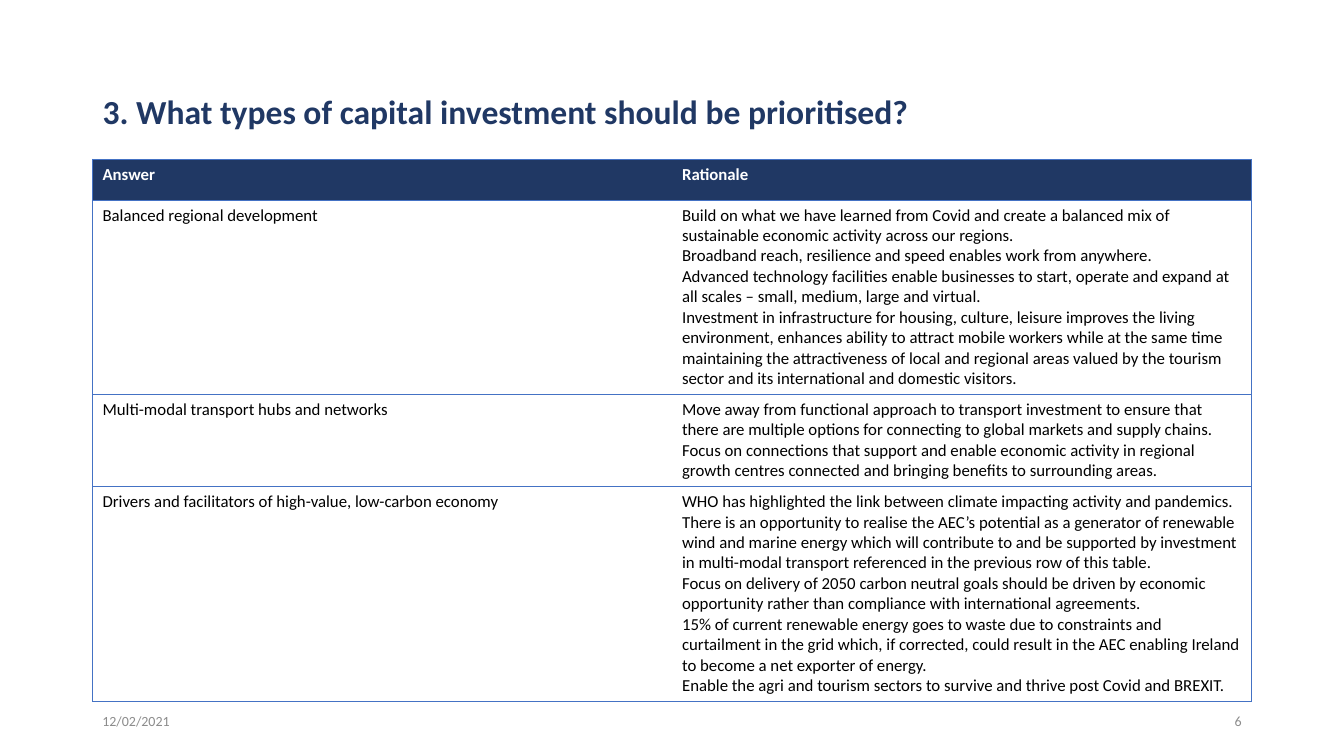
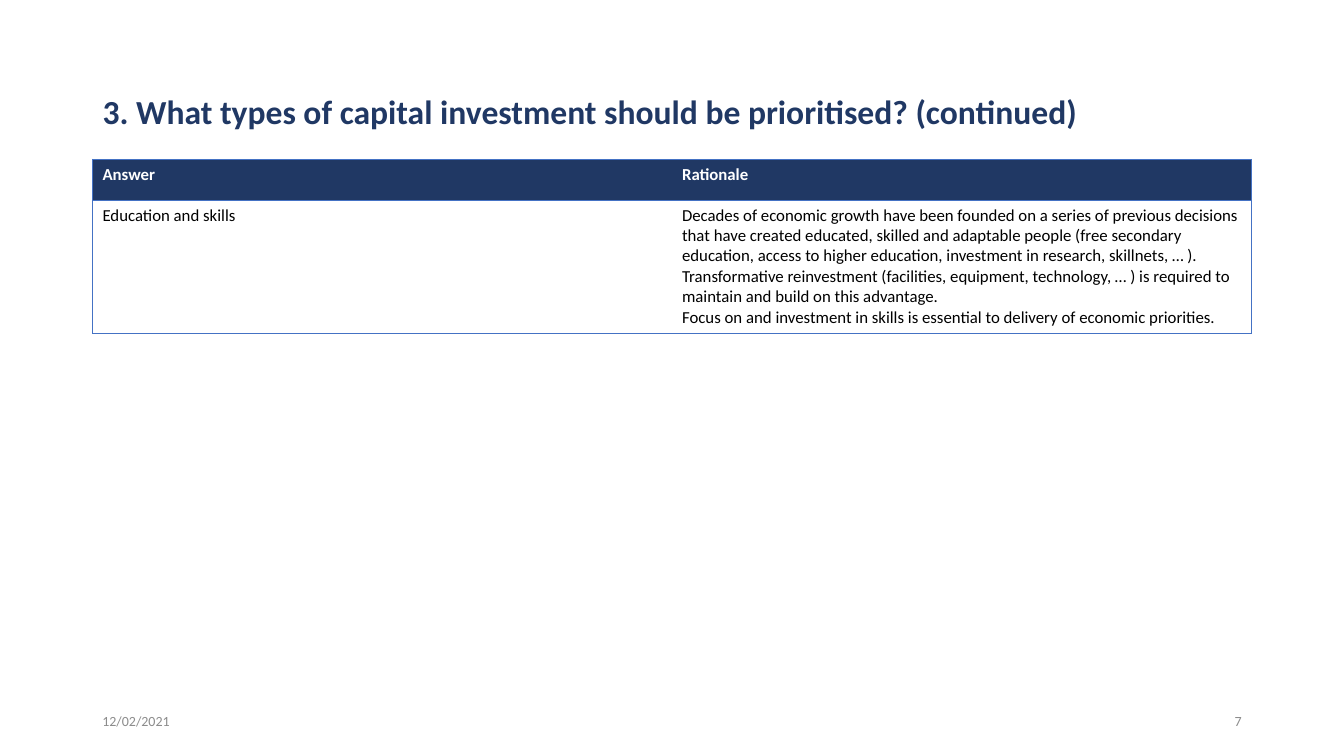
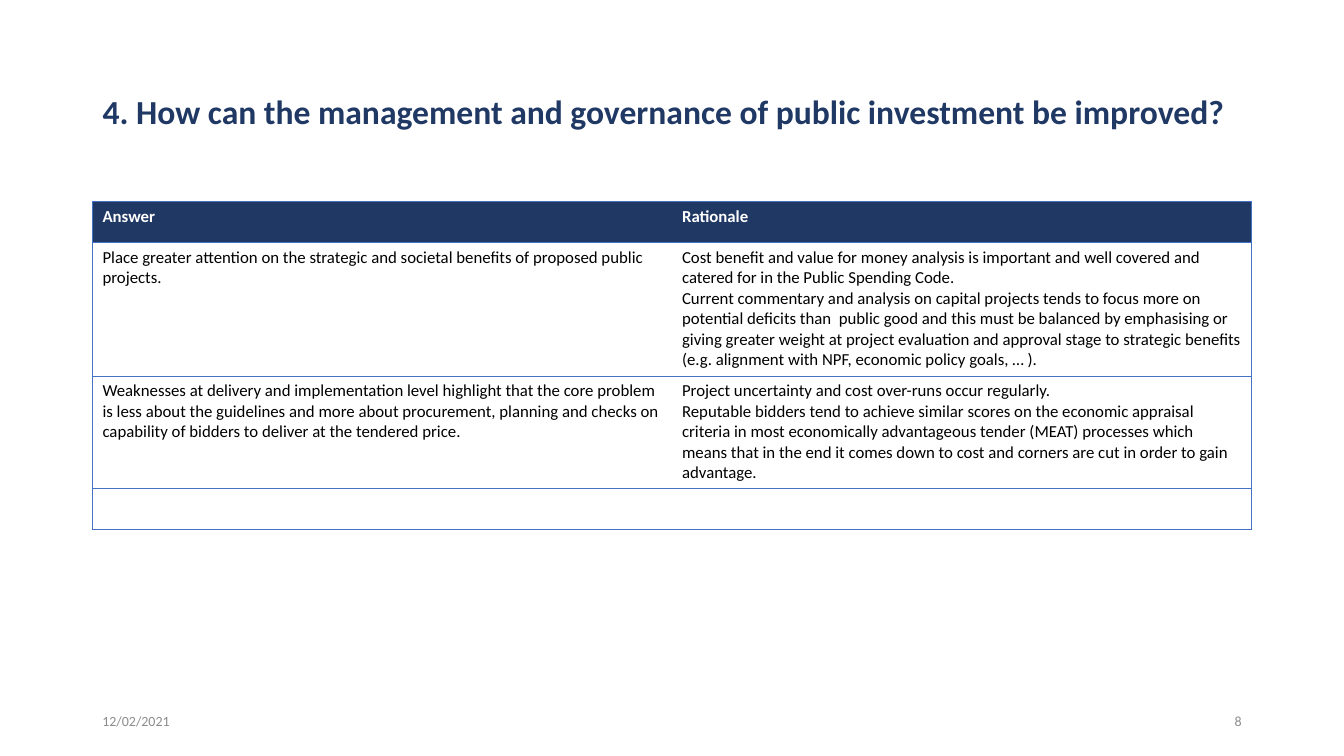
from lxml import etree
from pptx import Presentation
from pptx.dml.color import RGBColor
from pptx.enum.text import MSO_ANCHOR, MSO_AUTO_SIZE, PP_ALIGN
from pptx.oxml.ns import qn
from pptx.util import Cm, Pt

MIDDLE = MSO_ANCHOR.MIDDLE
NO_AUTOFIT = MSO_AUTO_SIZE.NONE
LEFT, RIGHT = PP_ALIGN.LEFT, PP_ALIGN.RIGHT

# Shared look
NAVY = RGBColor(0x20, 0x38, 0x64)
BORDER_BLUE = RGBColor(0x44, 0x72, 0xC4)
FOOTER_GREY = RGBColor(0x8C, 0x8C, 0x8C)
BLACK = RGBColor(0, 0, 0)
WHITE = RGBColor(0xFF, 0xFF, 0xFF)
FONT = "Calibri"
PLAIN_TABLE_STYLE = "{2D5ABB26-0587-4C30-8999-92F81FD0307C}"

MARGIN = Cm(2.33)
CONTENT_WIDTH = Cm(29.21)
FOOTER_WIDTH = Cm(7.62)
SHORT_ROW = 1.03
DATE = "12/02/2021"
FIRST_NUMBER = 6
HEADER = (SHORT_ROW, "Answer", ["Rationale"])

# Each slide: title, table top in cm, rows of (height in cm, answer, rationale paragraphs)
SLIDES = [
    ("3. What types of capital investment should be prioritised?", 4.01, [
        (4.9, "Balanced regional development", [
            "Build on what we have learned from Covid and create a balanced mix of "
            "sustainable economic activity across our regions.",
            "Broadband reach, resilience and speed enables work from anywhere.",
            "Advanced technology facilities enable businesses to start, operate and "
            "expand at all scales – small, medium, large and virtual.",
            "Investment in infrastructure for housing, culture, leisure improves the "
            "living environment, enhances ability to attract mobile workers while at "
            "the same time maintaining the attractiveness of local and regional areas "
            "valued by the tourism sector and its international and domestic visitors.",
        ]),
        (2.32, "Multi-modal transport hubs and networks", [
            "Move away from functional approach to transport investment to ensure that "
            "there are multiple options for connecting to global markets and supply "
            "chains.",
            "Focus on connections that support and enable economic activity in regional "
            "growth centres connected and bringing benefits to surrounding areas.",
        ]),
        (5.42, "Drivers and facilitators of high-value, low-carbon economy", [
            "WHO has highlighted the link between climate impacting activity and "
            "pandemics.",
            "There is an opportunity to realise the AEC’s potential as a generator of "
            "renewable wind and marine energy which will contribute to and be supported "
            "by investment in multi-modal transport referenced in the previous row of "
            "this table.",
            "Focus on delivery of 2050 carbon neutral goals should be driven by economic "
            "opportunity rather than compliance with international agreements.",
            "15% of current renewable energy goes to waste due to constraints and "
            "curtailment in the grid which, if corrected, could result in the AEC "
            "enabling Ireland to become a net exporter of energy.",
            "Enable the agri and tourism sectors to survive and thrive post Covid and "
            "BREXIT.",
        ]),
    ]),
    ("3. What types of capital investment should be prioritised? (continued)", 4.01, [
        (3.36, "Education and skills", [
            "Decades of economic growth have been founded on a series of previous "
            "decisions that have created educated, skilled and adaptable people (free "
            "secondary education, access to higher education, investment in research, "
            "skillnets, … ). Transformative reinvestment (facilities, equipment, "
            "technology, … ) is required to maintain and build on this advantage.",
            "Focus on and investment in skills is essential to delivery of economic "
            "priorities.",
        ]),
    ]),
    ("4. How can the management and governance of public investment be improved?", 5.08, [
        (3.36, "Place greater attention on the strategic and societal benefits of "
               "proposed public projects.", [
            "Cost benefit and value for money analysis is important and well covered and "
            "catered for in the Public Spending Code.",
            "Current commentary and analysis on capital projects tends to focus more on "
            "potential deficits than  public good and this must be balanced by "
            "emphasising or giving greater weight at project evaluation and approval "
            "stage to strategic benefits (e.g. alignment with NPF, economic policy "
            "goals, … ).",
        ]),
        (2.84, "Weaknesses at delivery and implementation level highlight that the core "
               "problem is less about the guidelines and more about procurement, planning "
               "and checks on capability of bidders to deliver at the tendered price.", [
            "Project uncertainty and cost over-runs occur regularly.",
            "Reputable bidders tend to achieve similar scores on the economic appraisal "
            "criteria in most economically advantageous tender (MEAT) processes which "
            "means that in the end it comes down to cost and corners are cut in order to "
            "gain advantage.",
        ]),
        (SHORT_ROW, "", [""]),
    ]),
]


def write_text(frame, lines, size, color, bold=False, align=LEFT):
    frame.text = "\n".join(lines)
    for paragraph in frame.paragraphs:
        paragraph.alignment = align
        paragraph.font.name = FONT
        paragraph.font.size = Pt(size)
        paragraph.font.bold = bold
        paragraph.font.color.rgb = color


def add_borders(cell, sides):
    properties = cell._tc.get_or_add_tcPr()
    for side in sides:
        line = etree.SubElement(properties, qn(f"a:ln{side}"), w=str(Pt(0.5)))
        fill = etree.SubElement(line, qn("a:solidFill"))
        etree.SubElement(fill, qn("a:srgbClr"), val=str(BORDER_BLUE))


presentation = Presentation()
presentation.slide_width = Cm(33.87)
presentation.slide_height = Cm(19.05)
title_only = presentation.slide_layouts[5]

for number, (heading, table_top, body_rows) in enumerate(SLIDES, FIRST_NUMBER):
    slide = presentation.slides.add_slide(title_only)

    # Title
    title = slide.shapes.title
    title.left, title.top = MARGIN, Cm(1.02)
    title.width, title.height = CONTENT_WIDTH, Cm(3.68)
    title.text_frame.auto_size = NO_AUTOFIT
    title.text_frame.vertical_anchor = MIDDLE
    write_text(title.text_frame, [heading], 24, NAVY, bold=True)
    title.text_frame.paragraphs[0].line_spacing = 0.9

    # Date and slide number
    number_left = MARGIN + CONTENT_WIDTH - FOOTER_WIDTH
    for text, left, align in ((DATE, MARGIN, LEFT), (str(number), number_left, RIGHT)):
        footer = slide.shapes.add_textbox(left, Cm(17.65), FOOTER_WIDTH, Cm(1.02))
        footer.text_frame.word_wrap = True
        footer.text_frame.vertical_anchor = MIDDLE
        write_text(footer.text_frame, [text], 10, FOOTER_GREY, align=align)

    # Answer and rationale table
    rows = [HEADER] + body_rows
    table_height = Cm(sum(row[0] for row in rows))
    table = slide.shapes.add_table(
        len(rows), 2, MARGIN, Cm(table_top), CONTENT_WIDTH, table_height).table
    table.horizontal_banding = False
    table._tbl.tblPr.find(qn("a:tableStyleId")).text = PLAIN_TABLE_STYLE

    for index, (height, answer, rationale) in enumerate(rows):
        table.rows[index].height = Cm(height)
        is_header = index == 0
        for column, (lines, sides) in enumerate((([answer], "LTB"), (rationale, "RTB"))):
            cell = table.cell(index, column)
            write_text(cell.text_frame, lines, 12, WHITE if is_header else BLACK, is_header)
            add_borders(cell, sides)
            if is_header:
                cell.fill.solid()
                cell.fill.fore_color.rgb = NAVY
            else:
                cell.fill.background()

presentation.save("out.pptx")
